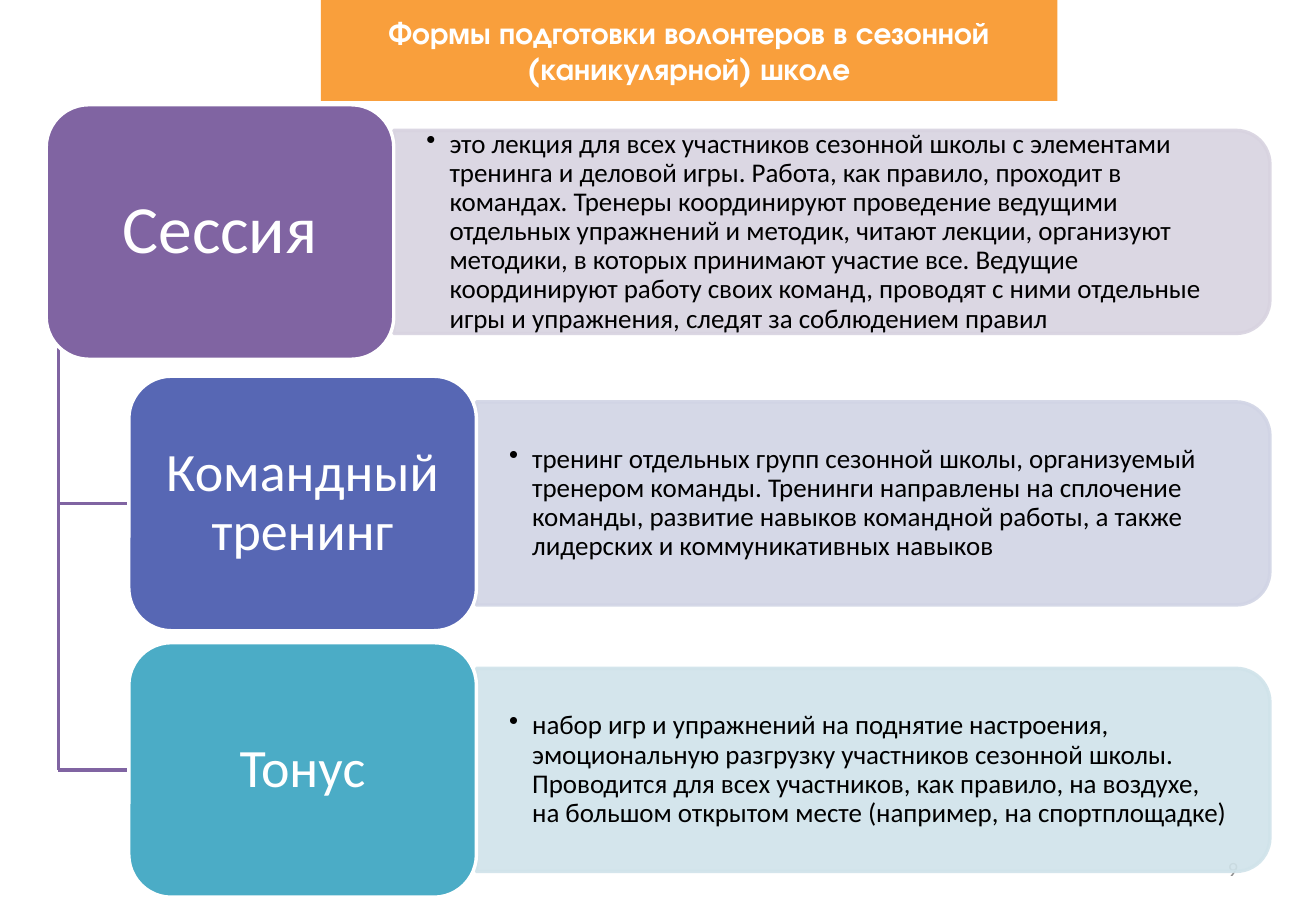
"""Build the slide on the forms of volunteer training in a seasonal school."""
from dataclasses import dataclass

from lxml import etree
from pptx import Presentation
from pptx.dml.color import RGBColor
from pptx.enum.shapes import MSO_CONNECTOR, MSO_SHAPE
from pptx.enum.text import MSO_ANCHOR, MSO_AUTO_SIZE, PP_ALIGN
from pptx.oxml.ns import qn
from pptx.shapes.autoshape import Shape
from pptx.slide import Slide
from pptx.util import Inches, Pt

ROUND_CARD = MSO_SHAPE.ROUNDED_RECTANGLE
ROUND_END = MSO_SHAPE.ROUND_2_SAME_RECTANGLE
STRAIGHT = MSO_CONNECTOR.STRAIGHT
MIDDLE = MSO_ANCHOR.MIDDLE
NO_AUTOFIT = MSO_AUTO_SIZE.NONE
LEFT, CENTER, RIGHT = PP_ALIGN.LEFT, PP_ALIGN.CENTER, PP_ALIGN.RIGHT

SLIDE_WIDTH, SLIDE_HEIGHT = Inches(10.83), Inches(7.5)
BODY_FONT, TITLE_FONT = "Calibri", "TeX Gyre Adventor"
WHITE, BLACK, GREY = "FFFFFF", "000000", "8C8C8C"
ORANGE, PURPLE = "F99F3C", "8064A2"
TITLE = "Формы подготовки волонтеров в сезонной (каникулярной) школе"

CARD_WIDTH, CARD_HEIGHT = 26.41, 27.93
PANEL_RIGHT, PANEL_HEIGHT = 96.5, 22.3
TEXT_HEIGHT, TEXT_RIGHT_GAP = 20.2, 0.74
SPINE_LEFT, SPINE_TOP = 4.43, 29.07
LINE_WIDTH = Pt(2)


@dataclass(frozen=True)
class Box:
    """A rectangle in percent of the slide's width and height."""
    left: float
    top: float
    width: float
    height: float

    def lengths(self) -> tuple[int, int, int, int]:
        """Return the rectangle as slide lengths."""
        return across(self.left), down(self.top), across(self.width), down(self.height)


@dataclass(frozen=True)
class TrainingForm:
    """One form of training: a card and its description panel."""
    name: str
    description: str
    left: float
    top: float
    name_size: int
    card_color: str
    panel_color: str

    @property
    def middle(self) -> float:
        """Return the height of the card's centre line."""
        return self.top + CARD_HEIGHT / 2

    @property
    def right(self) -> float:
        """Return the card's right edge."""
        return self.left + CARD_WIDTH


FORMS = [
    TrainingForm(
        "Сессия",
        "это лекция для всех участников сезонной школы с элементами тренинга и деловой "
        "игры. Работа, как правило, проходит в командах. Тренеры координируют проведение "
        "ведущими отдельных упражнений и методик, читают лекции, организуют методики, в "
        "которых принимают участие все. Ведущие координируют работу своих команд, проводят "
        "с ними отдельные игры и упражнения, следят за соблюдением правил",
        3.51, 11.5, 40, PURPLE, "D8D3E0"),
    TrainingForm(
        "Командный тренинг",
        "тренинг отдельных групп сезонной школы, организуемый тренером команды. Тренинги "
        "направлены на сплочение команды, развитие навыков командной работы, а также "
        "лидерских и коммуникативных навыков",
        9.79, 41.3, 32, "5767B4", "D1D4E5"),
    TrainingForm(
        "Тонус",
        "набор игр и упражнений на поднятие настроения, эмоциональную разгрузку участников "
        "сезонной школы. Проводится для всех участников, как правило, на воздухе, на "
        "большом открытом месте (например, на спортплощадке)",
        9.79, 70.55, 32, "4BACC6", "D0E3EA"),
]


def across(percent: float) -> int:
    """Return a share of the slide's width."""
    return round(SLIDE_WIDTH * percent / 100)


def down(percent: float) -> int:
    """Return a share of the slide's height."""
    return round(SLIDE_HEIGHT * percent / 100)


def paint(color_format, color: str) -> None:
    """Set a fill, line or font colour from a hex string."""
    color_format.rgb = RGBColor.from_string(color)


def write(shape: Shape, text: str, size: int, color: str, alignment: PP_ALIGN,
          font: str = BODY_FONT, bold: bool = False, spacing: float = 1.0,
          inset: tuple[float, float] = (0.92, 0.67), bullet: bool = False) -> None:
    """Put one formatted paragraph into a shape."""
    frame = shape.text_frame
    frame.text = text
    frame.word_wrap = True
    frame.auto_size = NO_AUTOFIT
    frame.vertical_anchor = MIDDLE
    frame.margin_left = frame.margin_right = across(inset[0])
    frame.margin_top = frame.margin_bottom = down(inset[1])
    paragraph = frame.paragraphs[0]
    paragraph.alignment = alignment
    paragraph.line_spacing = spacing
    if bullet:
        properties = paragraph._p.get_or_add_pPr()
        indent = across(1.75)
        properties.set("marL", str(indent))
        properties.set("indent", str(-indent))
        etree.SubElement(properties, qn("a:buChar")).set("char", "•")
    for run in paragraph.runs:
        run.font.name = font
        run.font.size = Pt(size)
        run.font.bold = bold
        paint(run.font.color, color)


def add_filled(slide: Slide, kind: MSO_SHAPE, box: Box, fill: str, line: str) -> Shape:
    """Add a flat shape with a fill and an outline."""
    shape = slide.shapes.add_shape(kind, *box.lengths())
    shape.shadow.inherit = False
    shape.fill.solid()
    paint(shape.fill.fore_color, fill)
    paint(shape.line.color, line)
    shape.line.width = LINE_WIDTH
    return shape


def add_line(slide: Slide, left: float, top: float, right: float, bottom: float) -> None:
    """Add a straight line of the tree."""
    connector = slide.shapes.add_connector(
        STRAIGHT, across(left), down(top), across(right), down(bottom))
    paint(connector.line.color, PURPLE)
    connector.line.width = LINE_WIDTH
    etree.SubElement(connector._element.spPr, qn("a:effectLst"))


def add_panel(slide: Slide, form: TrainingForm) -> None:
    """Add the translucent panel, turned so that its round end faces right."""
    box = Box(form.right, form.middle - PANEL_HEIGHT / 2,
              PANEL_RIGHT - form.right, PANEL_HEIGHT)
    panel = add_filled(slide, ROUND_END, box, form.panel_color, form.panel_color)
    left, top, width, height = box.lengths()
    panel.left, panel.top = left + (width - height) // 2, top + (height - width) // 2
    panel.width, panel.height = height, width
    panel.rotation = 90
    for color in panel._element.spPr.iter(qn("a:srgbClr")):
        etree.SubElement(color, qn("a:alpha")).set("val", "90000")


def add_form(slide: Slide, form: TrainingForm) -> None:
    """Add a panel, its description and the named card."""
    add_panel(slide, form)
    text_box = Box(form.right, form.middle - TEXT_HEIGHT / 2,
                   PANEL_RIGHT - TEXT_RIGHT_GAP - form.right, TEXT_HEIGHT)
    description = slide.shapes.add_textbox(*text_box.lengths())
    write(description, form.description, 16, BLACK, LEFT,
          spacing=0.9, inset=(2.49, 1.87), bullet=True)
    card_box = Box(form.left, form.top, CARD_WIDTH, CARD_HEIGHT)
    card = add_filled(slide, ROUND_CARD, card_box, form.card_color, WHITE)
    write(card, form.name, form.name_size, WHITE, CENTER, spacing=0.9, inset=(1.2, 0.93))


def main() -> None:
    """Build and save the presentation."""
    presentation = Presentation()
    presentation.slide_width, presentation.slide_height = SLIDE_WIDTH, SLIDE_HEIGHT
    slide = presentation.slides.add_slide(presentation.slide_layouts[5])

    title = slide.shapes.title
    title.left, title.top, title.width, title.height = Box(24.38, 0, 55.96, 11.07).lengths()
    title.fill.solid()
    paint(title.fill.fore_color, ORANGE)
    write(title, TITLE, 18, WHITE, CENTER, font=TITLE_FONT, bold=True)

    add_line(slide, SPINE_LEFT, SPINE_TOP, SPINE_LEFT, FORMS[-1].middle)
    for form in FORMS[1:]:
        add_line(slide, SPINE_LEFT, form.middle, form.left, form.middle)

    page_number = slide.shapes.add_textbox(*Box(71.65, 92.67, 23.36, 5.33).lengths())
    write(page_number, "9", 12, GREY, RIGHT)

    for form in FORMS:
        add_form(slide, form)
    presentation.save("out.pptx")


if __name__ == "__main__":
    main()
